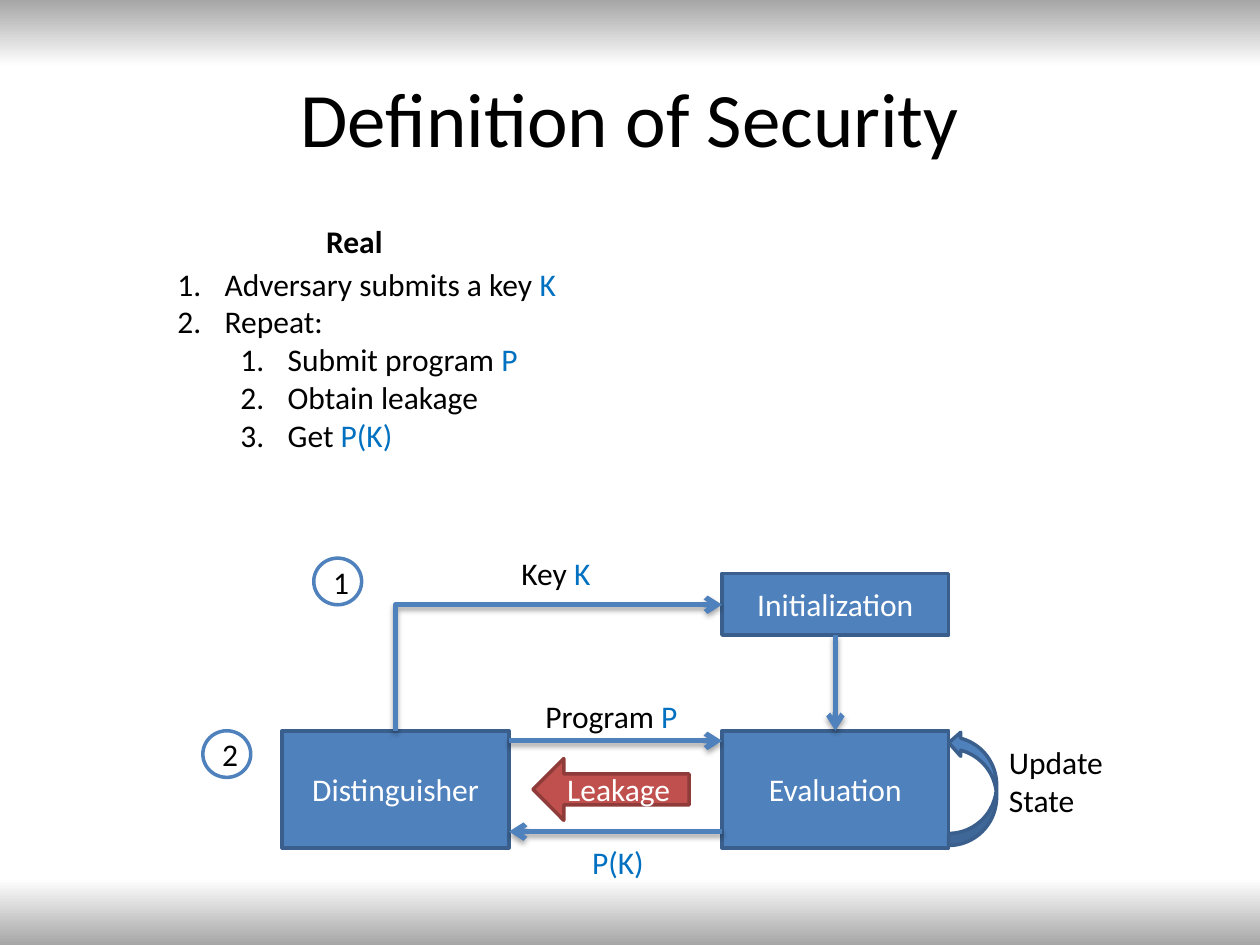
from typing import NamedTuple

from lxml import etree
from pptx import Presentation, util as u
from pptx.dml.color import RGBColor
from pptx.enum import shapes as s, text as t
from pptx.oxml import parse_xml
from pptx.oxml.ns import nsdecls, qn

# All lengths are cells of a grid of 100 columns by 75 rows.
CELL = u.Inches(0.1)
COLS, ROWS = 100, 75
BLUE, EDGE, TERM = "4F81BD", "3A5F8C", "0070C0"
RED, RUST, BLACK, WHITE, GREY = "C0504D", "8E3B39", "000000", "FFFFFF", "A6A6A6"

# Shared columns and rows of the diagram.
LEFT, RIGHT, WIDE = 22.4, 57.3, 18
TOP, LOW, TALL, SHORT = 45.5, 58, 9.3, 4.9
BEND = LEFT + WIDE / 2
MID = RIGHT + WIDE / 2
ENTRY = 48


class Box(NamedTuple):
    x: float
    y: float
    w: float
    h: float


class Node(NamedTuple):
    kind: s.MSO_SHAPE
    box: Box
    word: str = ""
    fill: str = BLUE
    edge: str = EDGE
    ink: str = WHITE


class Label(NamedTuple):
    box: Box
    lines: tuple
    form: dict = {}
    wrap: bool = False


class Arrow(NamedTuple):
    x1: float
    y1: float
    x2: float
    y2: float


RECT, OVAL = s.MSO_SHAPE.RECTANGLE, s.MSO_SHAPE.OVAL
NODES = [
    Node(RECT, Box(LEFT, LOW, WIDE, TALL), "Distinguisher"),
    Node(RECT, Box(RIGHT, TOP, WIDE, SHORT), "Initialization"),
    Node(RECT, Box(RIGHT, LOW, WIDE, TALL), "Evaluation"),
    Node(s.MSO_SHAPE.LEFT_ARROW, Box(42.3, 60.2, 12.4, SHORT), "Leakage", RED, RUST),
    Node(OVAL, Box(24.9, 44.3, 3.8, 3.7), "1", WHITE, BLUE, BLACK),
    Node(OVAL, Box(16.1, LOW, 3.8, 3.7), "2", WHITE, BLUE, BLACK),
]
ARROWS = [
    Arrow(MID, TOP + SHORT, MID, LOW),
    Arrow(LEFT + WIDE, 58.8, RIGHT, 58.8),
    Arrow(RIGHT, 66, LEFT + WIDE, 66),
]
LABELS = [
    Label(Box(42.3, 54.8, 12.6, 4), ("Program *P",)),
    Label(Box(46, 66.4, 6.2, 4), ("*P(K)",)),
    Label(Box(40.4, 43.5, 7.6, 4), ("Key *K",)),
    Label(Box(79.1, 58.5, 9.6, 7.1), ("Update", "State")),
    Label(Box(24.9, 17.1, 6.5, 4), ("Real",), {"bold": True}),
]
TITLE = Label(Box(5, 3, 90, 12.5), ("Definition of Security",),
              {"size": u.Pt(44)}, True)
STEPS = Label(Box(13.1, 20.5, 33, 16.2),
              ("Adversary submits a key *K", "Repeat:", "Submit program *P",
               "Obtain leakage", "Get *P(K)"), wrap=True)
LEVELS = (0, 0, 1, 1, 1)


def cells(*vals: float) -> list:
    return [round(v * CELL) for v in vals]


def tint(code: str) -> RGBColor:
    return RGBColor.from_string(code)


def put(obj, form: dict) -> None:
    for key, val in form.items():
        setattr(obj, key, val)


def write(para, line: str, ink: str, form: dict) -> None:
    """Add the line as runs; what follows a star is a blue term."""
    for part, hue in zip(line.split("*"), (ink, TERM)):
        if part:
            run = para.add_run()
            run.text = part
            put(run.font, {"name": "Calibri", "size": u.Pt(18), **form})
            run.font.color.rgb = tint(hue)


def node(slide, spec: Node):
    shape = slide.shapes.add_shape(spec.kind, *cells(*spec.box))
    shape.shadow.inherit = False
    shape.fill.solid()
    shape.fill.fore_color.rgb = tint(spec.fill)
    shape.line.color.rgb = tint(spec.edge)
    shape.line.width = u.Pt(2)
    frame = shape.text_frame
    frame.vertical_anchor = t.MSO_ANCHOR.MIDDLE
    para = frame.paragraphs[0]
    para.alignment = t.PP_ALIGN.CENTER
    write(para, spec.word, spec.ink, {})
    return shape


def label(slide, item: Label):
    frame = slide.shapes.add_textbox(*cells(*item.box)).text_frame
    fit = t.MSO_AUTO_SIZE.NONE if item.wrap else t.MSO_AUTO_SIZE.SHAPE_TO_FIT_TEXT
    put(frame, {"word_wrap": item.wrap, "auto_size": fit})
    for i, line in enumerate(item.lines):
        para = frame.add_paragraph() if i else frame.paragraphs[0]
        write(para, line, BLACK, item.form)
    return frame


def number(para, level: int) -> None:
    para.level = level
    props = para._p.get_or_add_pPr()
    hang = u.Inches(0.375)
    props.set("marL", str(hang + level * u.Inches(0.5)))
    props.set("indent", str(-hang))
    etree.SubElement(props, qn("a:buFont"), typeface="+mj-lt")
    etree.SubElement(props, qn("a:buAutoNum"), type="arabicPeriod")


def arrow(slide, ends: Arrow, kind=s.MSO_CONNECTOR.STRAIGHT):
    """Draw a line with an open head and a soft shadow below it."""
    link = slide.shapes.add_connector(kind, *cells(*ends))
    link.line.color.rgb = tint(BLUE)
    link.line.width = u.Pt(3)
    etree.SubElement(link.line._get_or_add_ln(), qn("a:tailEnd"), type="arrow")
    link._element.spPr.append(parse_xml(
        f'<a:effectLst {nsdecls("a")}><a:outerShdw blurRad="{u.Pt(3.1)}" '
        f'dist="{u.Pt(1.8)}" dir="5400000" rotWithShape="0"><a:srgbClr val="{BLACK}">'
        '<a:alpha val="35000"/></a:srgbClr></a:outerShdw></a:effectLst>'))
    return link


def elbow(slide, ends: Arrow) -> None:
    """Draw an arrow that goes up first and then right, with one corner."""
    link = arrow(slide, ends, s.MSO_CONNECTOR.ELBOW)
    wide, tall = ends.x2 - ends.x1, ends.y1 - ends.y2
    x, y = (ends.x1 + ends.x2 - tall) / 2, (ends.y1 + ends.y2 - wide) / 2
    put(link, dict(zip(("left", "top", "width", "height"), cells(x, y, tall, wide))))
    props = link._element.spPr
    props.find(qn("a:prstGeom")).set("prst", "bentConnector2")
    turn(link, rot="5400000")


def turn(shape, **more: str) -> None:
    """Flip both ways, with any further transform values."""
    frame = shape._element.spPr.find(qn("a:xfrm"))
    for key, val in {"flipH": "1", "flipV": "1", **more}.items():
        frame.set(key, val)


def shade(slide) -> None:
    fill = slide.background.fill
    fill.gradient()
    fill.gradient_angle = 90
    stops = slide.background._cSld.find(".//" + qn("a:gsLst"))
    for old in list(stops):
        stops.remove(old)
    for pos, hue in ((0, GREY), (7, WHITE), (93, WHITE), (100, GREY)):
        stop = etree.SubElement(stops, qn("a:gs"), pos=str(pos * 1000))
        etree.SubElement(stop, qn("a:srgbClr"), val=hue)


def main() -> None:
    deck = Presentation()
    deck.slide_width, deck.slide_height = cells(COLS, ROWS)
    slide = deck.slides.add_slide(deck.slide_layouts[6])
    shade(slide)
    head = label(slide, TITLE)
    head.vertical_anchor = t.MSO_ANCHOR.MIDDLE
    head.paragraphs[0].alignment = t.PP_ALIGN.CENTER
    for spec in NODES:
        node(slide, spec)
    for ends in ARROWS:
        arrow(slide, ends)
    elbow(slide, Arrow(BEND, LOW, RIGHT, ENTRY))
    loop = Box(RIGHT + WIDE, LOW, 3.8, 9.1)
    turn(node(slide, Node(s.MSO_SHAPE.CURVED_RIGHT_ARROW, loop)))
    for item in LABELS:
        label(slide, item)
    for para, level in zip(label(slide, STEPS).paragraphs, LEVELS):
        number(para, level)
    deck.save("out.pptx")


if __name__ == "__main__":
    main()
